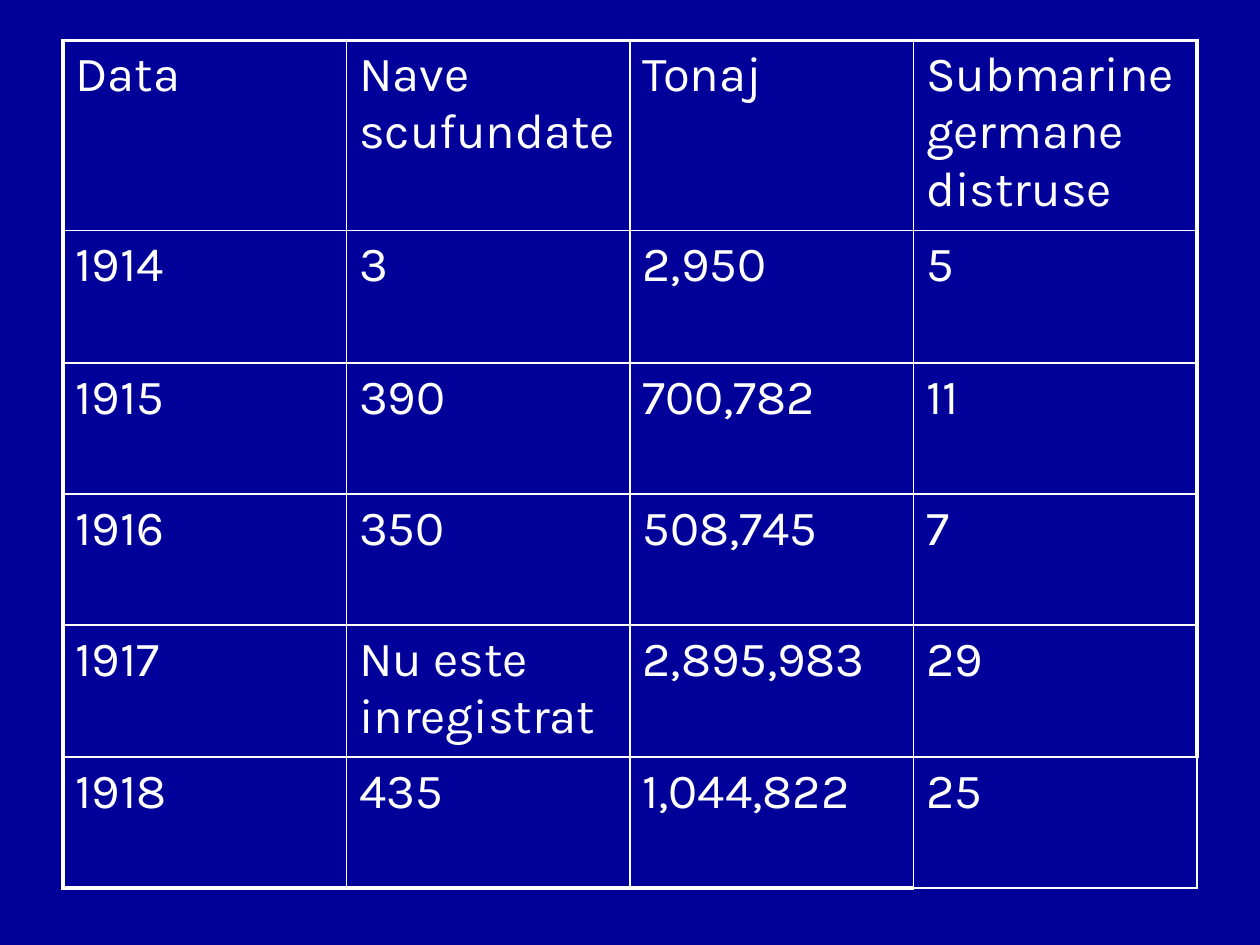
from lxml.etree import SubElement
from pptx import Presentation
from pptx.dml.color import RGBColor
from pptx.oxml.ns import qn
from pptx.util import Inches, Pt

BACKGROUND = RGBColor(0x00, 0x00, 0x99)
CELL_FILL = RGBColor(0x01, 0x01, 0x99)
WHITE = RGBColor(0xFF, 0xFF, 0xFF)
THIN, THICK = 1, 2.25

ROWS = [
    ("Data", "Nave scufundate", "Tonaj", "Submarine germane distruse"),
    ("1914", "3", "2,950", "5"),
    ("1915", "390", "700,782", "11"),
    ("1916", "350", "508,745", "7"),
    ("1917", "Nu este inregistrat", "2,895,983", "29"),
    ("1918", "435", "1,044,822", "25"),
]
ROW_HEIGHTS = [1.51, 1.05, 1.04, 1.04, 1.05, 1.04]
COLUMN_WIDTH = 2.25


def write_text(cell, text, font="Karla", size=28, color=WHITE):
    paragraph = cell.text_frame.paragraphs[0]
    run = paragraph.add_run()
    run.text = text
    run.font.name = font
    run.font.size = Pt(size)
    run.font.color.rgb = color


def set_border(cell, side, width, color=WHITE):
    properties = cell._tc.get_or_add_tcPr()
    line = SubElement(properties, qn(f"a:ln{side}"), w=str(Pt(width)))
    fill = SubElement(line, qn("a:solidFill"))
    SubElement(fill, qn("a:srgbClr"), val=str(color))


# Slide and background
presentation = Presentation()
presentation.slide_width = Inches(10)
presentation.slide_height = Inches(7.5)
slide = presentation.slides.add_slide(presentation.slide_layouts[6])
slide.background.fill.solid()
slide.background.fill.fore_color.rgb = BACKGROUND

# Table grid
row_count, column_count = len(ROWS), len(ROWS[0])
table = slide.shapes.add_table(
    row_count, column_count, Inches(0.5), Inches(0.32),
    Inches(column_count * COLUMN_WIDTH), Inches(sum(ROW_HEIGHTS)),
).table
table.first_row = False
table.horz_banding = False
for column in table.columns:
    column.width = Inches(COLUMN_WIDTH)
for row, height in zip(table.rows, ROW_HEIGHTS):
    row.height = Inches(height)

# Cells: thick outer frame, except around the last cell
last_row, last_column = row_count - 1, column_count - 1
for row_index, values in enumerate(ROWS):
    for column_index, value in enumerate(values):
        cell = table.cell(row_index, column_index)
        write_text(cell, value)
        is_last = (row_index, column_index) == (last_row, last_column)
        outer_sides = {
            "L": column_index == 0,
            "R": column_index == last_column and not is_last,
            "T": row_index == 0,
            "B": row_index == last_row and not is_last,
        }
        for side, is_outer in outer_sides.items():
            set_border(cell, side, THICK if is_outer else THIN)
        cell.fill.solid()
        cell.fill.fore_color.rgb = CELL_FILL

presentation.save("out.pptx")
